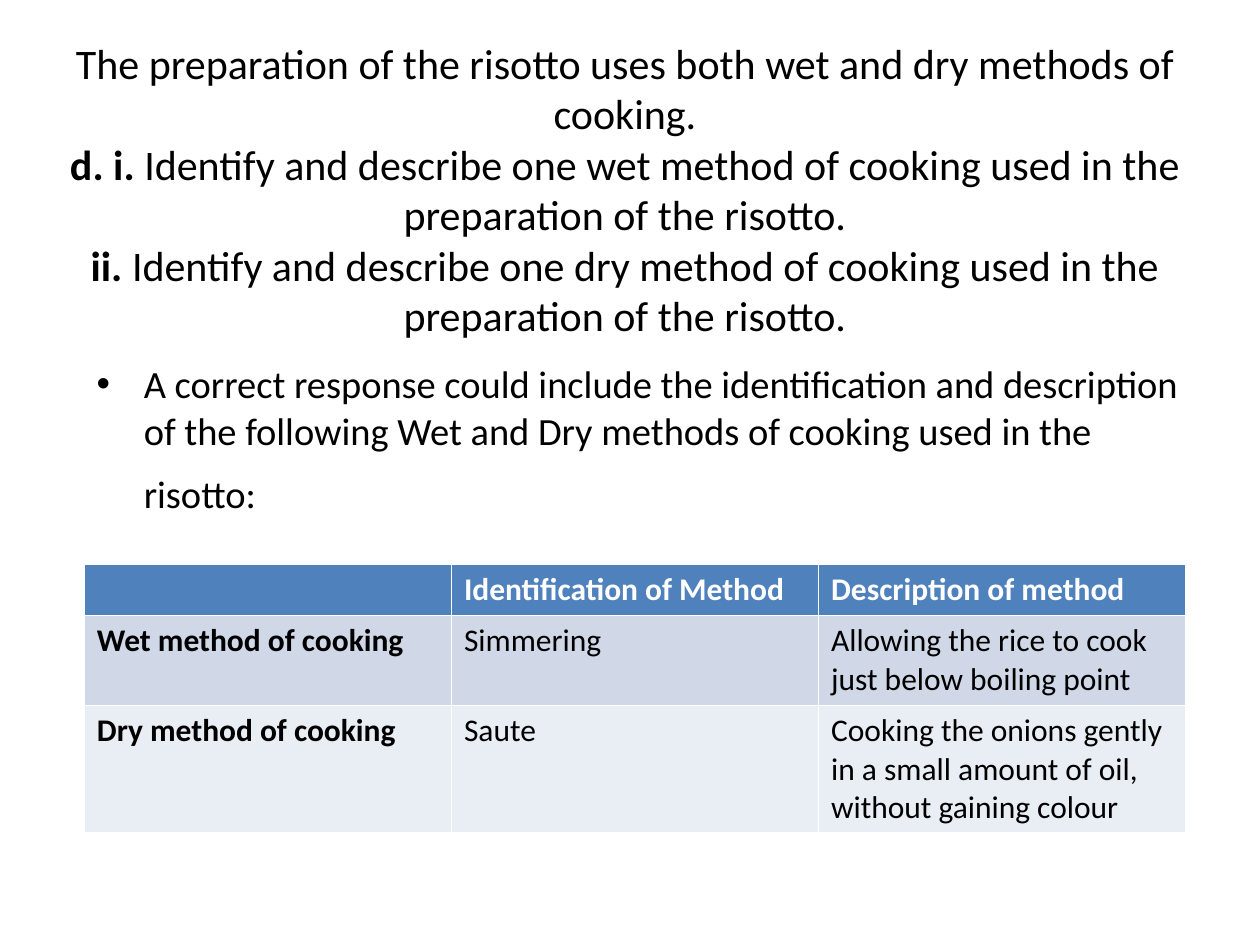
"""Build a slide on wet and dry cooking methods for risotto."""
from lxml import etree
from pptx import Presentation
from pptx.dml.color import RGBColor
from pptx.enum.text import MSO_ANCHOR, PP_ALIGN
from pptx.oxml.ns import qn
from pptx.util import Cm, Pt

MIDDLE, TOP = MSO_ANCHOR.MIDDLE, MSO_ANCHOR.TOP
CENTER, LEFT = PP_ALIGN.CENTER, PP_ALIGN.LEFT
BLACK = RGBColor(0x00, 0x00, 0x00)
WHITE = RGBColor(0xFF, 0xFF, 0xFF)
BLUE = RGBColor(0x4F, 0x81, 0xBD)
BANDS = [RGBColor(0xD0, 0xD8, 0xE8), RGBColor(0xE9, 0xED, 0xF4)]
FONT = "Calibri"

TASKS = [
    ("", "The preparation of the risotto uses both wet and dry methods of cooking."),
    ("d. i. ", "Identify and describe one wet method of cooking used in the preparation of the risotto."),
    ("ii. ", "Identify and describe one dry method of cooking used in the preparation of the risotto."),
]
ANSWER = ("A correct response could include the identification and description "
          "of the following Wet and Dry methods of cooking used in the risotto:")
ROWS = [
    ("", "Identification of Method", "Description of method"),
    ("Wet method of cooking", "Simmering", "Allowing the rice to cook just below boiling point"),
    ("Dry method of cooking", "Saute",
     "Cooking the onions gently in a small amount of oil, without gaining colour"),
]
HEIGHTS = [1.03, 1.81, 2.57]
WIDTH = 7.4


def add_run(para, text, size, bold=False, color=BLACK):
    run = para.add_run()
    run.text = text
    font = run.font
    font.name, font.size, font.bold = FONT, Pt(size), bold
    font.color.rgb = color


def add_box(slide, left, top, width, height, anchor, align):
    frame = slide.shapes.add_textbox(Cm(left), Cm(top), Cm(width), Cm(height)).text_frame
    frame.word_wrap = True
    frame.vertical_anchor = anchor
    para = frame.paragraphs[0]
    para.alignment = align
    return frame, para


def add_title(slide):
    frame, para = add_box(slide, 0.5, 2.72, 24.2, 3.18, MIDDLE, CENTER)
    frame.margin_bottom = Cm(1.14)
    for place, (label, task) in enumerate(TASKS):
        if place:
            para.add_line_break()
        if label:
            add_run(para, label, 24, True)
        add_run(para, task, 24)


def add_answer(slide):
    para = add_box(slide, 1.7, 7.14, 22.86, 11.91, TOP, LEFT)[1]
    props = para._p.get_or_add_pPr()
    props.set("marL", str(Cm(0.95)))
    props.set("indent", str(-Cm(0.95)))
    etree.SubElement(props, qn("a:buFont"), typeface="Arial")
    etree.SubElement(props, qn("a:buChar"), char="•")
    add_run(para, ANSWER, 22)
    add_run(para, " ", 32)


def add_grid(slide):
    count = len(ROWS[0])
    table = slide.shapes.add_table(len(ROWS), count, Cm(1.7), Cm(11.38),
                                   Cm(WIDTH * count), Cm(sum(HEIGHTS))).table
    table.horz_banding = False
    for col in table.columns:
        col.width = Cm(WIDTH)
    for r, (texts, height) in enumerate(zip(ROWS, HEIGHTS)):
        table.rows[r].height = Cm(height)
        for c, text in enumerate(texts):
            cell = table.cell(r, c)
            cell.fill.solid()
            cell.fill.fore_color.rgb = BANDS[r - 1] if r else BLUE
            if text:
                add_run(cell.text_frame.paragraphs[0], text, 18,
                        r == 0 or c == 0, BLACK if r else WHITE)


def main():
    deck = Presentation()
    deck.slide_width, deck.slide_height = Cm(25.4), Cm(19.05)
    slide = deck.slides.add_slide(deck.slide_layouts[6])
    add_title(slide)
    add_answer(slide)
    add_grid(slide)
    deck.save("out.pptx")


if __name__ == "__main__":
    main()
